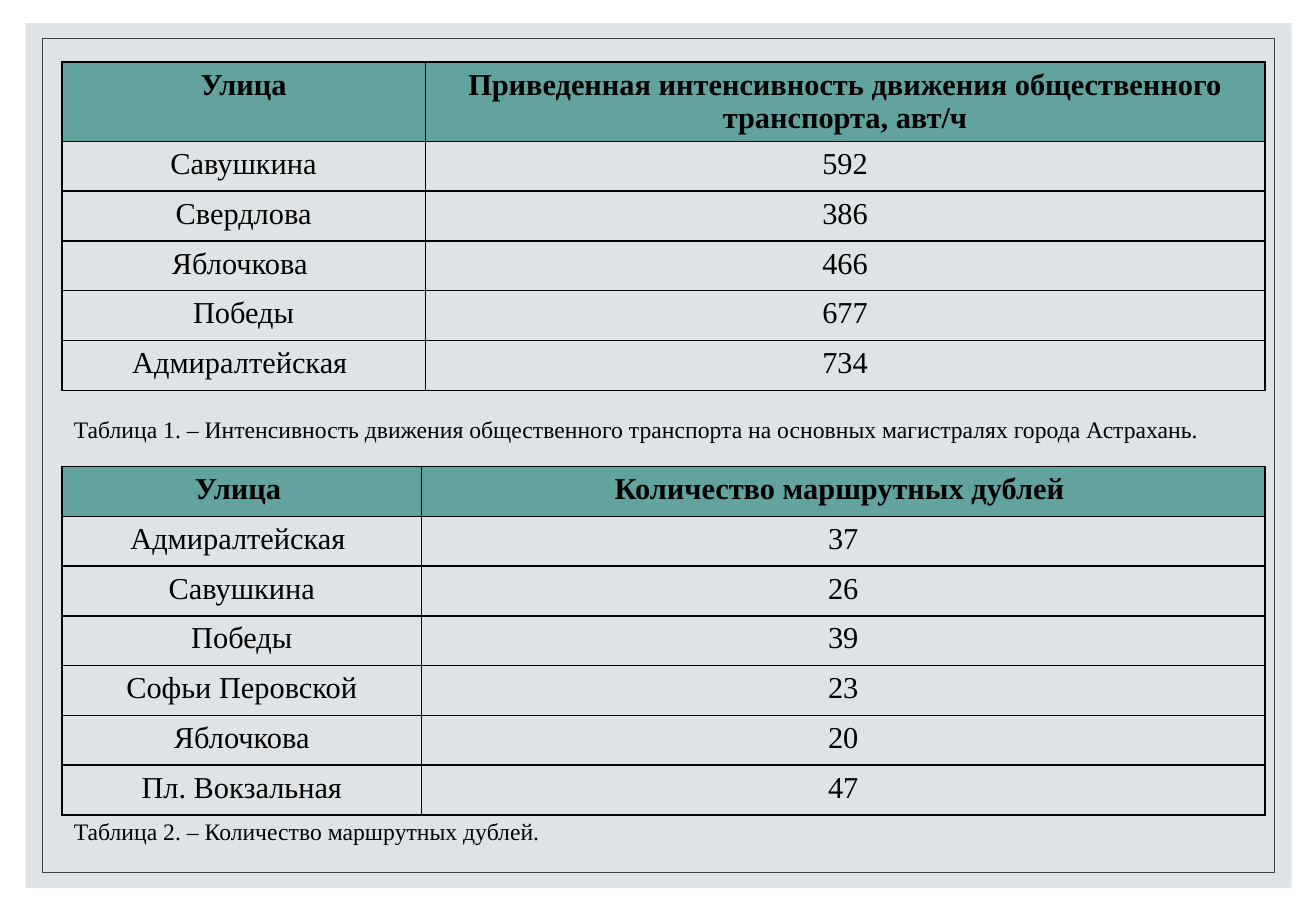
import dataclasses

import lxml.etree
import pptx
import pptx.dml.color
import pptx.enum.shapes
import pptx.enum.text
import pptx.oxml.ns
import pptx.util

EMU_PER_PX = 9144


@dataclasses.dataclass(frozen=True)
class Theme:
    font: str = "Times New Roman"
    panel: str = "DFE3E5"
    frame: str = "404040"
    header: str = "62A39F"
    ink: str = "000000"
    table_size: int = 18
    caption_size: int = 14
    frame_width: float = 0.5
    border_width: int = 1


@dataclasses.dataclass(frozen=True)
class Box:
    left: int
    top: int
    width: int
    height: int

    def emu(self) -> tuple[int, ...]:
        return tuple(px(value) for value in dataclasses.astuple(self))


@dataclasses.dataclass(frozen=True)
class StreetTable:
    top: int
    columns: tuple[int, int]
    header_height: int
    row_height: int
    rows: tuple[tuple[str, str], ...]


@dataclasses.dataclass(frozen=True)
class Caption:
    box: Box
    text: str
    wrap: bool


THEME = Theme()
TABLE_LEFT = 51
TABLE_WIDTH = 990

TABLES = (
    StreetTable(51, (299, 691), 65, 41, (
        ("Улица", "Приведенная интенсивность движения общественного транспорта, авт/ч"),
        ("Савушкина", "592"),
        ("Свердлова", "386"),
        ("Яблочкова ", "466"),
        ("Победы", "677"),
        ("Адмиралтейская ", "734"),
    )),
    StreetTable(384, (296, 694), 41, 41, (
        ("Улица ", "Количество маршрутных дублей "),
        ("Адмиралтейская ", "37"),
        ("Савушкина", "26"),
        ("Победы", "39"),
        ("Софьи Перовской", "23"),
        ("Яблочкова", "20"),
        ("Пл. Вокзальная", "47"),
    )),
)

CAPTIONS = (
    Caption(
        Box(TABLE_LEFT, 337, TABLE_WIDTH, 34),
        "Таблица 1. – Интенсивность движения общественного транспорта "
        "на основных магистралях города Астрахань.",
        True,
    ),
    Caption(Box(TABLE_LEFT, 668, 407, 34), "Таблица 2. – Количество маршрутных дублей.", False),
)


def px(value: int) -> int:
    return pptx.util.Emu(value * EMU_PER_PX)


def colour(code: str) -> pptx.dml.color.RGBColor:
    return pptx.dml.color.RGBColor.from_string(code)


def style_text(frame, size: int, bold: bool = False) -> None:
    for para in frame.paragraphs:
        for span in para.runs:
            span.font.name = THEME.font
            span.font.size = pptx.util.Pt(size)
            span.font.bold = bold
            span.font.color.rgb = colour(THEME.ink)


def draw_rectangle(page, box: Box):
    shape = page.shapes.add_shape(pptx.enum.shapes.MSO_SHAPE.RECTANGLE, *box.emu())
    shape.shadow.inherit = False
    return shape


def draw_background(page) -> None:
    panel = draw_rectangle(page, Box(21, 19, 1042, 712))
    panel.fill.solid()
    panel.fill.fore_color.rgb = colour(THEME.panel)
    panel.line.fill.background()
    frame = draw_rectangle(page, Box(35, 32, 1014, 686))
    frame.fill.background()
    frame.line.color.rgb = colour(THEME.frame)
    frame.line.width = pptx.util.Pt(THEME.frame_width)


def add_borders(cell) -> None:
    name = pptx.oxml.ns.qn
    properties = cell._tc.get_or_add_tcPr()
    for side in ("a:lnL", "a:lnR", "a:lnT", "a:lnB"):
        width = str(pptx.util.Pt(THEME.border_width))
        line = lxml.etree.SubElement(properties, name(side), w=width)
        fill = lxml.etree.SubElement(line, name("a:solidFill"))
        lxml.etree.SubElement(fill, name("a:srgbClr"), val=THEME.ink)


def draw_cell(cell, text: str, is_header: bool) -> None:
    cell.text_frame.text = text
    cell.text_frame.paragraphs[0].alignment = pptx.enum.text.PP_ALIGN.CENTER
    style_text(cell.text_frame, THEME.table_size, is_header)
    add_borders(cell)
    if is_header:
        cell.fill.solid()
        cell.fill.fore_color.rgb = colour(THEME.header)
    else:
        cell.fill.background()


def draw_table(page, data: StreetTable) -> None:
    heights = [data.header_height] + [data.row_height] * (len(data.rows) - 1)
    box = Box(TABLE_LEFT, data.top, TABLE_WIDTH, sum(heights))
    table = page.shapes.add_table(len(data.rows), len(data.columns), *box.emu()).table
    table.horz_banding = False
    for column, width in zip(table.columns, data.columns):
        column.width = px(width)
    for index, (row, height, texts) in enumerate(zip(table.rows, heights, data.rows)):
        row.height = px(height)
        for cell, text in zip(row.cells, texts):
            draw_cell(cell, text, index == 0)


def draw_caption(page, caption: Caption) -> None:
    frame = page.shapes.add_textbox(*caption.box.emu()).text_frame
    frame.word_wrap = caption.wrap
    frame.auto_size = pptx.enum.text.MSO_AUTO_SIZE.SHAPE_TO_FIT_TEXT
    frame.text = caption.text
    style_text(frame, THEME.caption_size)


def main() -> None:
    deck = pptx.Presentation()
    deck.slide_width = px(1083)
    deck.slide_height = px(750)
    page = deck.slides.add_slide(deck.slide_layouts[6])
    draw_background(page)
    for data, caption in zip(TABLES, CAPTIONS):
        draw_table(page, data)
        draw_caption(page, caption)
    deck.save("out.pptx")


if __name__ == "__main__":
    main()
